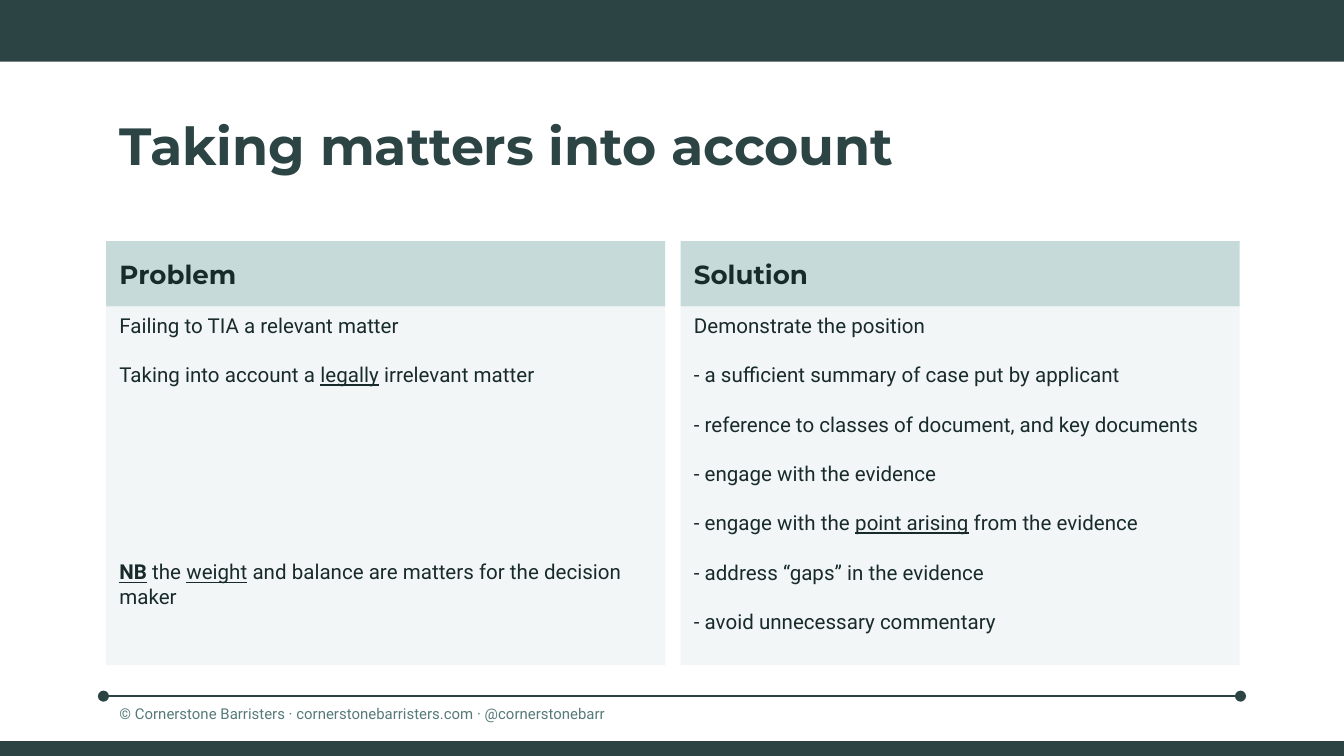
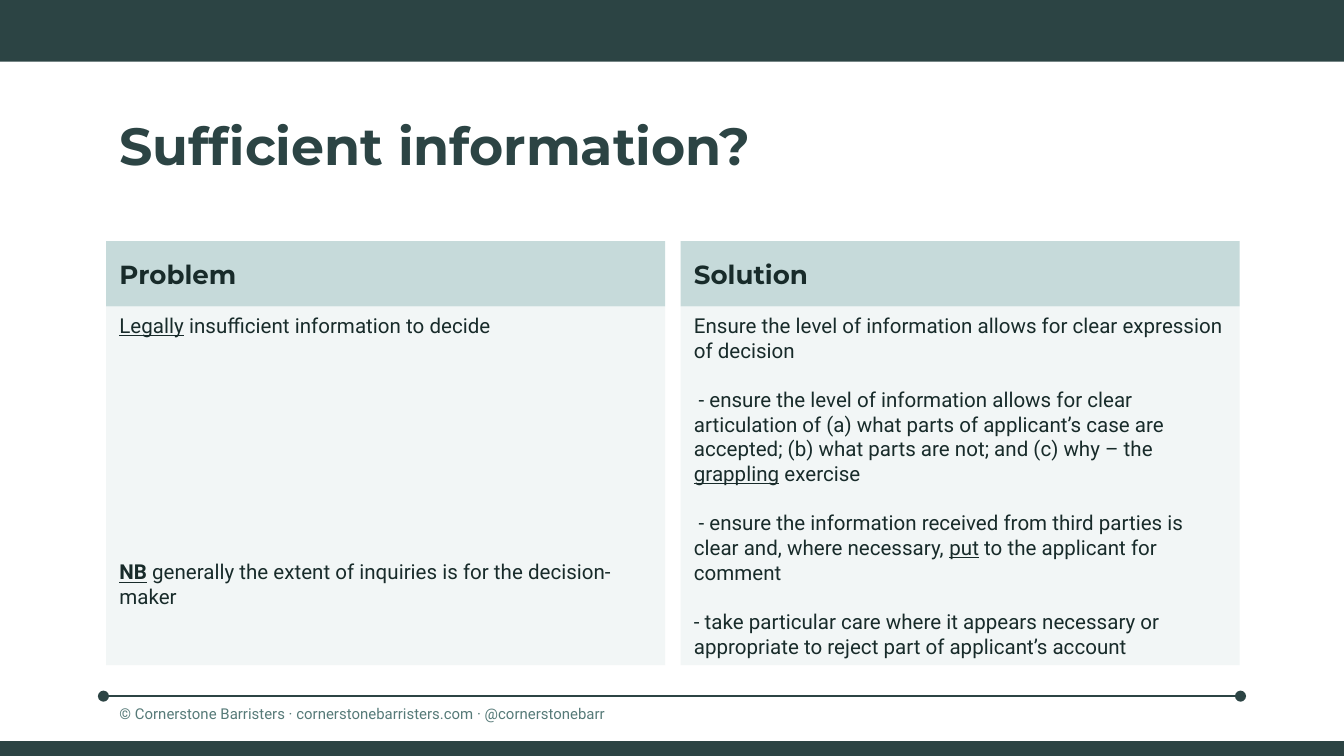
"""Build two problem and solution slides with shared bands, title and footer."""
from lxml import etree
from pptx import Presentation, util as u
from pptx.dml.color import RGBColor
from pptx.enum import shapes, text
from pptx.oxml.ns import qn

PX = 4572
LINE = 13.2
HUE = {"dark": "2C4444", "head": "C6DADA", "panel": "F2F6F6", "ink": "182B2A", "foot": "567A78"}
FOOT = "© Cornerstone Barristers · cornerstonebarristers.com · @cornerstonebarr"
BANDS = [(0, 92), (1103, 22)]
COLS = {"Problem": 158, "Solution": 1013}

DECK = [
    ("Taking matters into account", {
        "Problem": [
            (0, 0, "Failing to TIA a relevant matter"),
            (1, 0, "Taking into account a _legally_ irrelevant matter"),
            (7, 0, "_NB_ the _weight_ and balance are matters for the decision maker"),
        ],
        "Solution": [
            (0, 0, "Demonstrate the position"),
            (1, 0, "- a sufficient summary of case put by applicant"),
            (1, 0, "- reference to classes of document, and key documents"),
            (1, 0, "- engage with the evidence"),
            (1, 0, "- engage with the _point arising_ from the evidence"),
            (1, 0, "- address “gaps” in the evidence"),
            (1, 0, "- avoid unnecessary commentary"),
        ],
    }),
    ("Sufficient information?", {
        "Problem": [
            (0, 0, "_Legally_ insufficient information to decide"),
            (9, 0, "_NB_ generally the extent of inquiries is for the decision-maker"),
        ],
        "Solution": [
            (0, 0, "Ensure the level of information allows for clear expression of decision"),
            (1, 7, "- ensure the level of information allows for clear articulation of "
                   "(a) what parts of applicant’s case are accepted; (b) what parts are not; "
                   "and (c) why – the _grappling_ exercise"),
            (1, 7, "- ensure the information received from third parties is clear and, "
                   "where necessary, _put_ to the applicant for comment"),
            (1, 0, "- take particular care where it appears necessary or appropriate "
                   "to reject part of applicant’s account"),
        ],
    }),
]


def block(slide, at, fill=None):
    """Add a filled rectangle, or a text box when there is no fill."""
    at = [n * PX for n in at]
    if fill is None:
        return slide.shapes.add_textbox(*at)
    box = slide.shapes.add_shape(shapes.MSO_SHAPE.RECTANGLE, *at)
    box.shadow.inherit = False
    box.fill.solid()
    box.fill.fore_color.rgb = RGBColor.from_string(HUE[fill])
    box.line.fill.background()
    return box


def write(box, rows, face, size, hue, bold=False, mid=False):
    """Write rows of (blank lines before, first indent, text with _underline_)."""
    frame = box.text_frame
    frame.word_wrap = True
    frame.vertical_anchor = text.MSO_ANCHOR.MIDDLE if mid else text.MSO_ANCHOR.TOP
    for i, (gap, dent, line) in enumerate(rows):
        para = frame.add_paragraph() if i else frame.paragraphs[0]
        para.alignment = text.PP_ALIGN.LEFT
        if gap:
            para.space_before = u.Pt(gap * LINE)
        if dent:
            para._p.get_or_add_pPr().set("indent", str(dent * PX))
        for j, part in enumerate(line.split("_")):
            if part:
                run = para.add_run()
                run.text = part
                font = run.font
                font.name, font.size = face, u.Pt(size)
                font.color.rgb = RGBColor.from_string(HUE[hue])
                font.bold = bold or part == "NB"
                font.underline = j % 2 == 1


prs = Presentation()
prs.slide_width, prs.slide_height = 2000 * PX, 1125 * PX

for title, cols in DECK:
    slide = prs.slides.add_slide(prs.slide_layouts[6])

    rule = slide.shapes.add_connector(
        shapes.MSO_CONNECTOR.STRAIGHT, 154 * PX, 1036 * PX, 1846 * PX, 1036 * PX)
    rule.line.color.rgb = RGBColor.from_string(HUE["dark"])
    rule.line.width = u.Pt(0.75)
    for end in ("a:headEnd", "a:tailEnd"):
        etree.SubElement(rule.line._get_or_add_ln(), qn(end), type="oval")
    etree.SubElement(rule._element.spPr, qn("a:effectLst"))

    for top, high in BANDS:
        block(slide, (0, top, 2028, high), "dark")

    foot = block(slide, (158, 1028, 990, 62))
    foot.text_frame.margin_top = 20 * PX
    write(foot, [(0, 0, FOOT)], "Roboto", 8, "foot")

    write(block(slide, (158, 158, 1688, 116)), [(0, 0, title)], "Montserrat", 28, "dark", bold=True)

    for name, left in COLS.items():
        write(block(slide, (left, 456, 832, 534), "panel"), cols[name], "Roboto", 11, "ink")
        write(block(slide, (left, 359, 832, 97), "head"), [(0, 0, name)],
              "Montserrat", 14, "ink", bold=True, mid=True)

prs.save("out.pptx")
